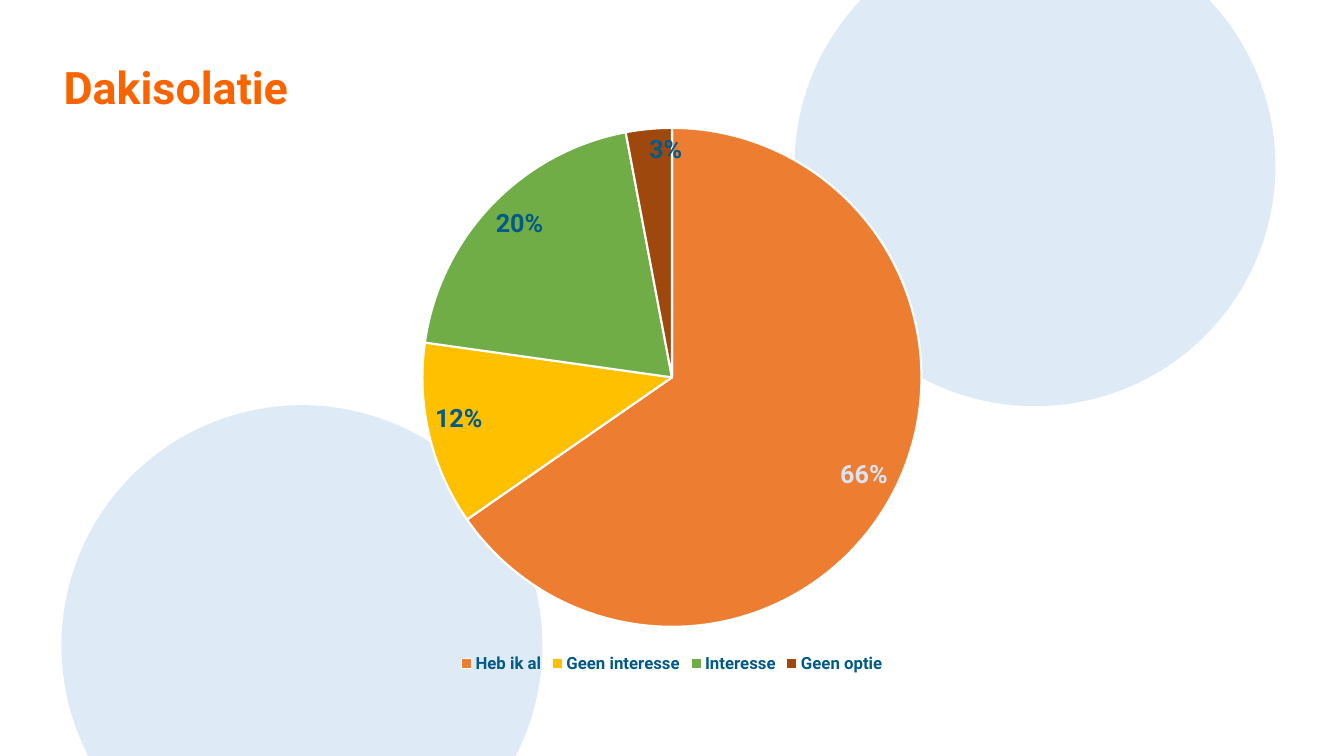
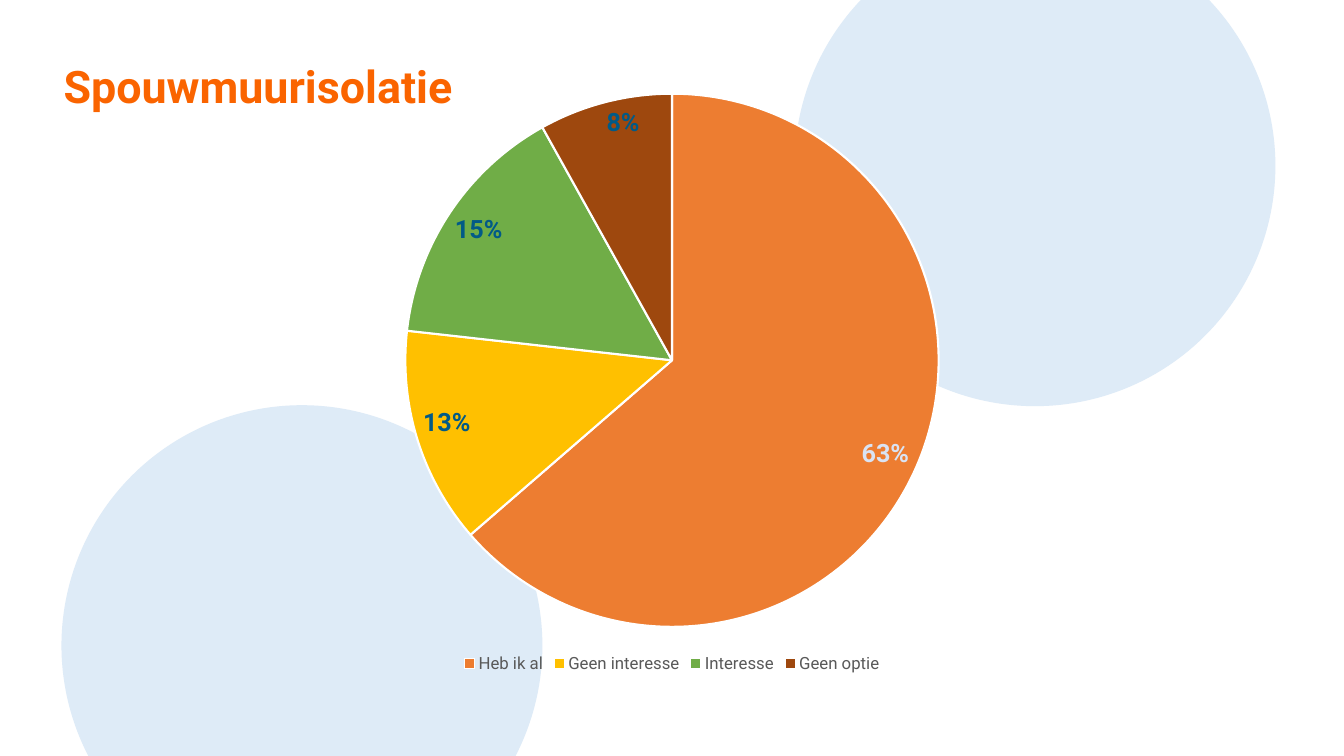
from dataclasses import dataclass

from pptx import Presentation
from pptx.chart.data import CategoryChartData
from pptx.dml.color import RGBColor
from pptx.enum.chart import XL_CHART_TYPE as ChartType
from pptx.enum.chart import XL_LABEL_POSITION as LabelPosition
from pptx.enum.chart import XL_LEGEND_POSITION as LegendPosition
from pptx.enum.shapes import MSO_SHAPE as Preset
from pptx.enum.text import MSO_ANCHOR as Anchor
from pptx.enum.text import PP_ALIGN as Align
from pptx.oxml import parse_xml
from pptx.oxml.ns import nsdecls
from pptx.util import Inches, Pt


@dataclass(frozen=True)
class Theme:
    font: str = "Roboto"
    title: str = "FA6400"
    circle: str = "DEEBF7"
    label: str = "015A87"
    light_label: str = "DAE3F3"
    muted: str = "595959"
    border: str = "FFFFFF"
    slices: tuple = ("ED7D31", "FFC000", "70AD47", "9E480E")
    title_size: int = 32
    label_size: int = 18
    legend_size: int = 12


@dataclass(frozen=True)
class Box:
    left: float
    top: float
    width: float
    height: float

    def lengths(self):
        return [Inches(n) for n in (self.left, self.top, self.width, self.height)]


@dataclass(frozen=True)
class Topic:
    title: str
    title_top: float
    values: tuple
    pie_top: float
    legend_color: str
    legend_bold: bool


THEME = Theme()
CHART_BOX = Box(2.22, 0.79, 8.89, 5.93)
PIE_BOTTOM = 6.22
CIRCLES = (Box(7.88, -0.74, 4.77, 4.77), Box(0.61, 4.02, 4.77, 4.77))
ANSWERS = ("Heb ik al", "Geen interesse", "Interesse", "Geen optie")
TOPICS = (
    Topic("Dakisolatie", 0.42, (66, 12, 20, 3), 1.27, THEME.label, True),
    Topic("Spouwmuurisolatie", 0.41, (63, 13, 15, 8), 0.93, THEME.muted, False),
)


def style_font(font, size, color, bold):
    font.name = THEME.font
    font.size = Pt(size)
    font.bold = bold
    font.color.rgb = RGBColor.from_string(color)


def add_backdrop(page):
    """Draw the circles and hand them to the layout, so every slide shares them."""
    layout_tree = page.slide_layout.shapes.element
    for index, box in enumerate(CIRCLES):
        circle = page.shapes.add_shape(Preset.OVAL, *box.lengths())
        circle.shadow.inherit = False
        circle.fill.solid()
        circle.fill.fore_color.rgb = RGBColor.from_string(THEME.circle)
        circle.line.fill.background()
        circle.element.nvSpPr.cNvPr.set("id", str(20 + index))
        layout_tree.insert(2 + index, circle.element)


def place_title(page, text, box):
    title = page.shapes.title
    title.left, title.top, title.width, title.height = box.lengths()
    frame = title.text_frame
    frame.text = text
    frame.word_wrap = True
    frame.vertical_anchor = Anchor.BOTTOM
    frame.margin_left = frame.margin_right = Inches(0.05)
    frame.margin_top = frame.margin_bottom = Inches(0.05)
    para = frame.paragraphs[0]
    para.alignment = Align.LEFT
    para.line_spacing = 0.9
    style_font(para.runs[0].font, THEME.title_size, THEME.title, True)


def fix_pie_area(chart, box, pie_top):
    """Centre the pie across the chart box, from pie_top down to the shared bottom."""
    diameter = PIE_BOTTOM - pie_top
    shares = {
        "x": (1 - diameter / box.width) / 2,
        "y": (pie_top - box.top) / box.height,
        "w": diameter / box.width,
        "h": diameter / box.height,
    }
    modes = "".join(f'<c:{axis}Mode val="edge"/>' for axis in "xy")
    sizes = "".join(f'<c:{key} val="{share:.4f}"/>' for key, share in shares.items())
    layout = parse_xml(
        f'<c:layout {nsdecls("c")}><c:manualLayout><c:layoutTarget val="inner"/>'
        f"{modes}{sizes}</c:manualLayout></c:layout>"
    )
    plot_area = chart.element.chart.plotArea
    for old in plot_area.findall(layout.tag):
        plot_area.remove(old)
    plot_area.insert(0, layout)


def style_slices(plot):
    plot.vary_by_categories = True
    plot.has_data_labels = True
    labels = plot.data_labels
    labels.show_value = True
    labels.position = LabelPosition.INSIDE_END
    style_font(labels.font, THEME.label_size, THEME.label, True)
    for index, color in enumerate(THEME.slices):
        point = plot.series[0].points[index]
        point.format.fill.solid()
        point.format.fill.fore_color.rgb = RGBColor.from_string(color)
        point.format.line.width = Pt(1.5)
        point.format.line.color.rgb = RGBColor.from_string(THEME.border)
        label_color = THEME.light_label if index == 0 else THEME.label
        style_font(point.data_label.font, THEME.label_size, label_color, True)
        point.data_label.position = LabelPosition.INSIDE_END


def add_pie(page, topic, box):
    data = CategoryChartData(number_format='0"%"')
    data.categories = ANSWERS
    data.add_series("Series 1", topic.values)
    chart = page.shapes.add_chart(ChartType.PIE, *box.lengths(), data).chart
    chart.has_title = False
    chart.font.name = THEME.font
    chart.has_legend = True
    chart.legend.position = LegendPosition.BOTTOM
    chart.legend.include_in_layout = False
    style_font(chart.legend.font, THEME.legend_size, topic.legend_color, topic.legend_bold)
    style_slices(chart.plots[0])
    fix_pie_area(chart, box, topic.pie_top)


def main():
    deck = Presentation()
    deck.slide_width, deck.slide_height = Inches(13.33), Inches(7.5)
    title_only = deck.slide_layouts[5]
    for topic in TOPICS:
        page = deck.slides.add_slide(title_only)
        place_title(page, topic.title, Box(0.58, topic.title_top, 11.71, 0.76))
        add_pie(page, topic, CHART_BOX)
    add_backdrop(deck.slides[0])
    deck.save("out.pptx")


if __name__ == "__main__":
    main()
